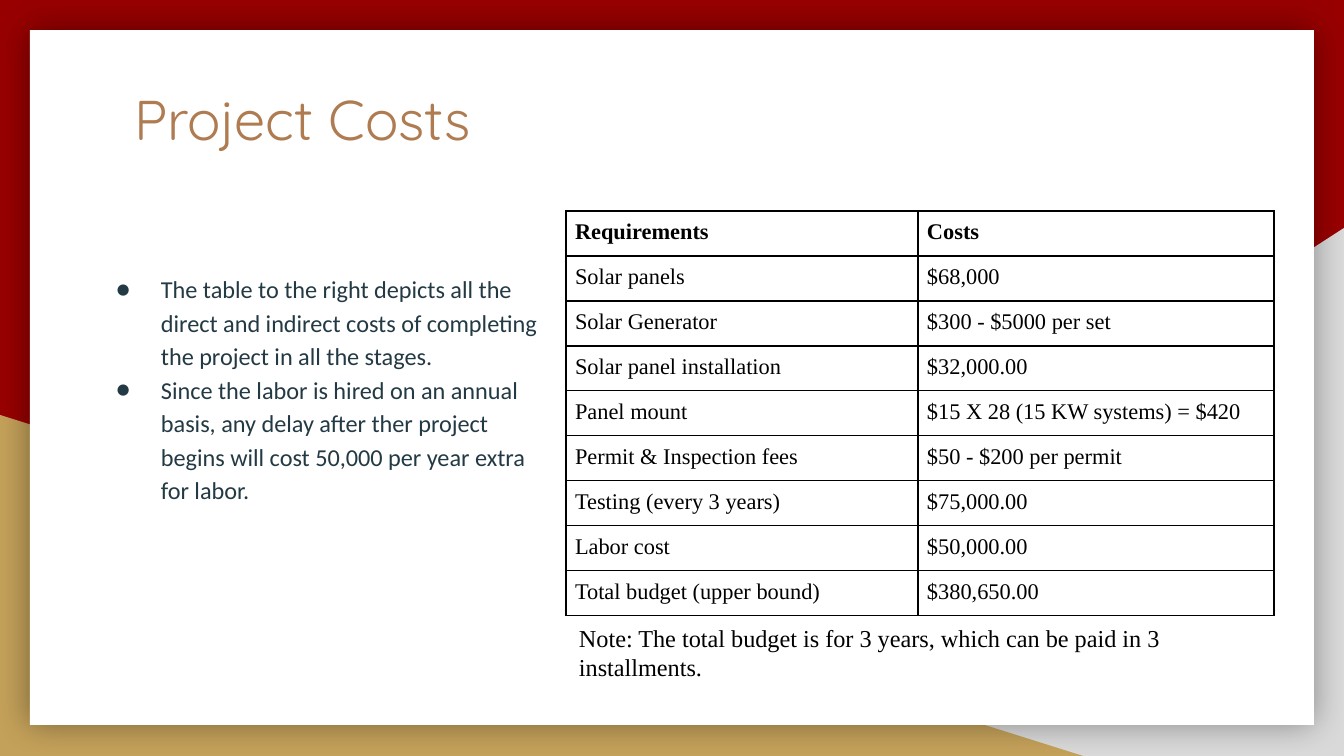
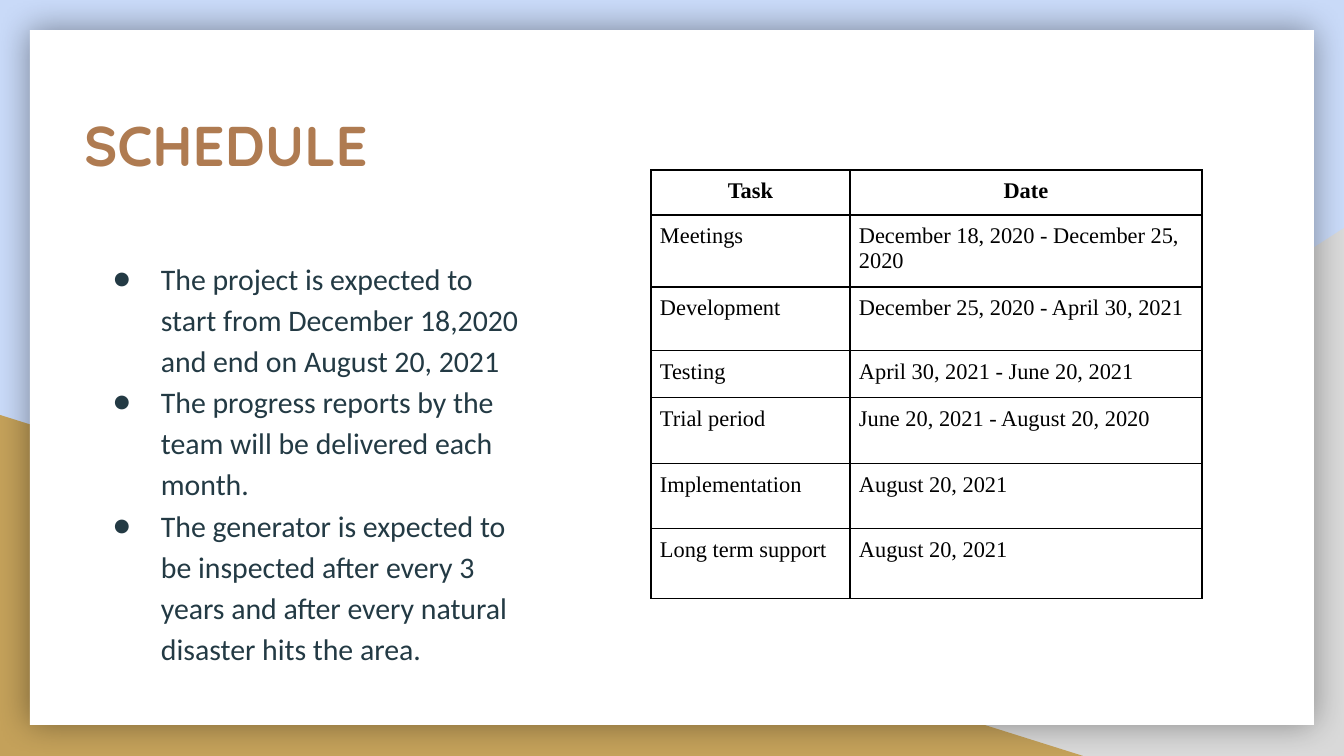
"""Build the project costs and schedule slides."""
from lxml import etree
from pptx import Presentation
from pptx.dml.color import RGBColor
from pptx.enum.shapes import MSO_SHAPE
from pptx.enum.text import MSO_ANCHOR, MSO_AUTO_SIZE, PP_ALIGN
from pptx.oxml.ns import qn
from pptx.util import Emu, Pt

RECTANGLE, TRIANGLE = MSO_SHAPE.RECTANGLE, MSO_SHAPE.RIGHT_TRIANGLE
TOP, MIDDLE = MSO_ANCHOR.TOP, MSO_ANCHOR.MIDDLE
LEFT, CENTER = PP_ALIGN.LEFT, PP_ALIGN.CENTER
NO_AUTOFIT = MSO_AUTO_SIZE.NONE

RED = RGBColor(0x98, 0x00, 0x00)
PALE_BLUE = RGBColor(0xC9, 0xDA, 0xF8)
GREY = RGBColor(0xD9, 0xD9, 0xD9)
GOLD = RGBColor(0xC4, 0xA1, 0x5A)
WHITE = RGBColor(0xFF, 0xFF, 0xFF)
BLACK = RGBColor(0x00, 0x00, 0x00)
BRONZE = RGBColor(0xAF, 0x7B, 0x51)
SLATE = RGBColor(0x23, 0x3A, 0x44)

TITLE_FONT, BODY_FONT, TABLE_FONT = "Quicksand", "Calibri", "Times New Roman"
EMU_PER_PX = 914400 / 134.4
SLIDE_SIZE = (1344, 756)
TEXT_INSET, CELL_INSET = 13, 9
BULLET_INDENT = 67

BACKDROP = [
    (TRIANGLE, (527, 228, 817, 528), GREY, True),
    (TRIANGLE, (0, 415, 1083, 341), GOLD, False),
]
PANEL_BOX = (30, 30, 1284, 695)

SLIDES = [
    {
        "background": RED,
        "title": "Project Costs",
        "title_box": (121, 71, 1103, 140),
        "title_bold": False,
        "points": [
            "The table to the right depicts all the direct and indirect costs "
            "of completing the project in all the stages.",
            "Since the labor is hired on an annual basis, any delay after ther "
            "project begins will cost 50,000 per year extra for labor.",
        ],
        "points_box": (81, 257, 485, 360),
        "points_size": 13,
        "hanging": 45,
        "rows": [
            ("Requirements", "Costs"),
            ("Solar panels", "$68,000"),
            ("Solar Generator", "$300 - $5000 per set"),
            ("Solar panel installation", "$32,000.00"),
            ("Panel mount", "$15 X 28 (15 KW systems) = $420"),
            ("Permit & Inspection fees", "$50 - $200 per permit"),
            ("Testing (every 3 years)", "$75,000.00"),
            ("Labor cost", "$50,000.00"),
            ("Total budget (upper bound)", "$380,650.00"),
        ],
        "table_at": (566, 211),
        "widths": [352, 356],
        "heights": [43] * 9,
        "header_align": LEFT,
        "note": "Note: The total budget is for 3 years, which can be paid in 3 installments.",
        "note_box": (566, 617, 708, 70),
    },
    {
        "background": PALE_BLUE,
        "title": "SCHEDULE",
        "title_box": (71, 98, 551, 65),
        "title_bold": True,
        "points": [
            "The project is expected to start from December 18,2020 and end on "
            "August 20, 2021",
            "The progress reports by the team will be delivered each month.",
            "The generator is expected to be inspected after every 3 years and "
            "after every natural disaster hits the area.",
        ],
        "points_box": (81, 242, 452, 450),
        "points_size": 16,
        "hanging": 48,
        "rows": [
            ("Task", "Date"),
            ("Meetings", "December 18, 2020 - December 25, 2020"),
            ("Development", "December 25, 2020 - April 30, 2021"),
            ("Testing", "April 30, 2021 - June 20, 2021"),
            ("Trial period", "June 20, 2021 - August 20, 2020"),
            ("Implementation", "August 20, 2021"),
            ("Long term support", "August 20, 2021"),
        ],
        "table_at": (651, 170),
        "widths": [199, 352],
        "heights": [44, 68, 64, 47, 66, 65, 70],
        "header_align": CENTER,
    },
]


def px(length):
    return Emu(round(length * EMU_PER_PX))


def place(box):
    return [px(length) for length in box]


def add_bullet(paragraph, color, hanging):
    properties = paragraph._p.get_or_add_pPr()
    properties.set("marL", str(px(BULLET_INDENT)))
    properties.set("indent", str(-px(hanging)))
    bullet_color = etree.SubElement(properties, qn("a:buClr"))
    etree.SubElement(bullet_color, qn("a:srgbClr"), val=str(color))
    etree.SubElement(properties, qn("a:buFont"), typeface=BODY_FONT)
    etree.SubElement(properties, qn("a:buChar"), char="●")


def write(frame, *texts, font, size, color, bold=False, align=LEFT,
          anchor=TOP, spacing=None, hanging=None, inset=TEXT_INSET):
    frame.word_wrap = True
    frame.vertical_anchor = anchor
    frame.margin_left = frame.margin_right = px(inset)
    frame.margin_top = frame.margin_bottom = px(inset)
    for index, text in enumerate(texts):
        paragraph = frame.add_paragraph() if index else frame.paragraphs[0]
        paragraph.alignment = align
        if spacing:
            paragraph.line_spacing = spacing
        if hanging:
            add_bullet(paragraph, color, hanging)
        run = paragraph.add_run()
        run.text = text
        run.font.name, run.font.size = font, Pt(size)
        run.font.bold, run.font.color.rgb = bold, color


def add_block(slide, kind, box, color):
    block = slide.shapes.add_shape(kind, *place(box))
    block.shadow.inherit = False
    block.fill.solid()
    block.fill.fore_color.rgb = color
    block.line.fill.background()
    return block


def add_backdrop(slide, color):
    slide.background.fill.solid()
    slide.background.fill.fore_color.rgb = color
    for kind, box, fill, flipped in BACKDROP:
        block = add_block(slide, kind, box, fill)
        if flipped:
            block._element.spPr.find(qn("a:xfrm")).set("flipH", "1")
    panel = add_block(slide, RECTANGLE, PANEL_BOX, WHITE)
    effects = panel._element.spPr.find(qn("a:effectLst"))
    shadow = etree.SubElement(effects, qn("a:outerShdw"), blurRad=str(Pt(18)),
                              dist="0", algn="ctr", rotWithShape="0")
    shade = etree.SubElement(shadow, qn("a:srgbClr"), val=str(BLACK))
    etree.SubElement(shade, qn("a:alpha"), val="40000")


def add_borders(cell):
    properties = cell._tc.get_or_add_tcPr()
    for side in ("lnL", "lnR", "lnT", "lnB"):
        border = etree.SubElement(properties, qn(f"a:{side}"), w=str(Pt(1)))
        fill = etree.SubElement(border, qn("a:solidFill"))
        etree.SubElement(fill, qn("a:srgbClr"), val=str(BLACK))


def add_grid(slide, rows, corner, widths, heights, header_align):
    box = (*corner, sum(widths), sum(heights))
    table = slide.shapes.add_table(len(rows), len(widths), *place(box)).table
    table.first_row = table.horz_banding = False
    for column, width in zip(table.columns, widths):
        column.width = px(width)
    for row_index, (texts, height) in enumerate(zip(rows, heights)):
        table.rows[row_index].height = px(height)
        header = row_index == 0
        for column_index, text in enumerate(texts):
            cell = table.cell(row_index, column_index)
            add_borders(cell)
            cell.fill.background()
            cell.margin_left = cell.margin_right = px(CELL_INSET)
            cell.margin_top = cell.margin_bottom = px(CELL_INSET)
            cell.vertical_anchor = TOP
            paragraph = cell.text_frame.paragraphs[0]
            paragraph.alignment = header_align if header else LEFT
            run = paragraph.add_run()
            run.text = text
            run.font.name, run.font.size = TABLE_FONT, Pt(12)
            run.font.bold, run.font.color.rgb = header, BLACK


def add_title(slide, text, box, bold):
    title = slide.shapes.title
    title.left, title.top, title.width, title.height = place(box)
    title.text_frame.auto_size = NO_AUTOFIT
    write(title.text_frame, text, font=TITLE_FONT, size=30, color=BRONZE, bold=bold)
    slide.shapes._spTree.append(title._element)


def add_slide(deck, content):
    slide = deck.slides.add_slide(deck.slide_layouts.get_by_name("Title Only"))
    add_backdrop(slide, content["background"])
    add_title(slide, content["title"], content["title_box"], content["title_bold"])
    points = slide.shapes.add_textbox(*place(content["points_box"]))
    write(points.text_frame, *content["points"], font=BODY_FONT,
          size=content["points_size"], color=SLATE, spacing=1.15,
          hanging=content["hanging"])
    add_grid(slide, content["rows"], content["table_at"], content["widths"],
             content["heights"], content["header_align"])
    if "note" in content:
        note = slide.shapes.add_textbox(*place(content["note_box"]))
        write(note.text_frame, content["note"], font=TABLE_FONT, size=13,
              color=BLACK, anchor=MIDDLE)


def main():
    deck = Presentation()
    deck.slide_width, deck.slide_height = place(SLIDE_SIZE)
    for content in SLIDES:
        add_slide(deck, content)
    deck.save("out.pptx")


if __name__ == "__main__":
    main()
